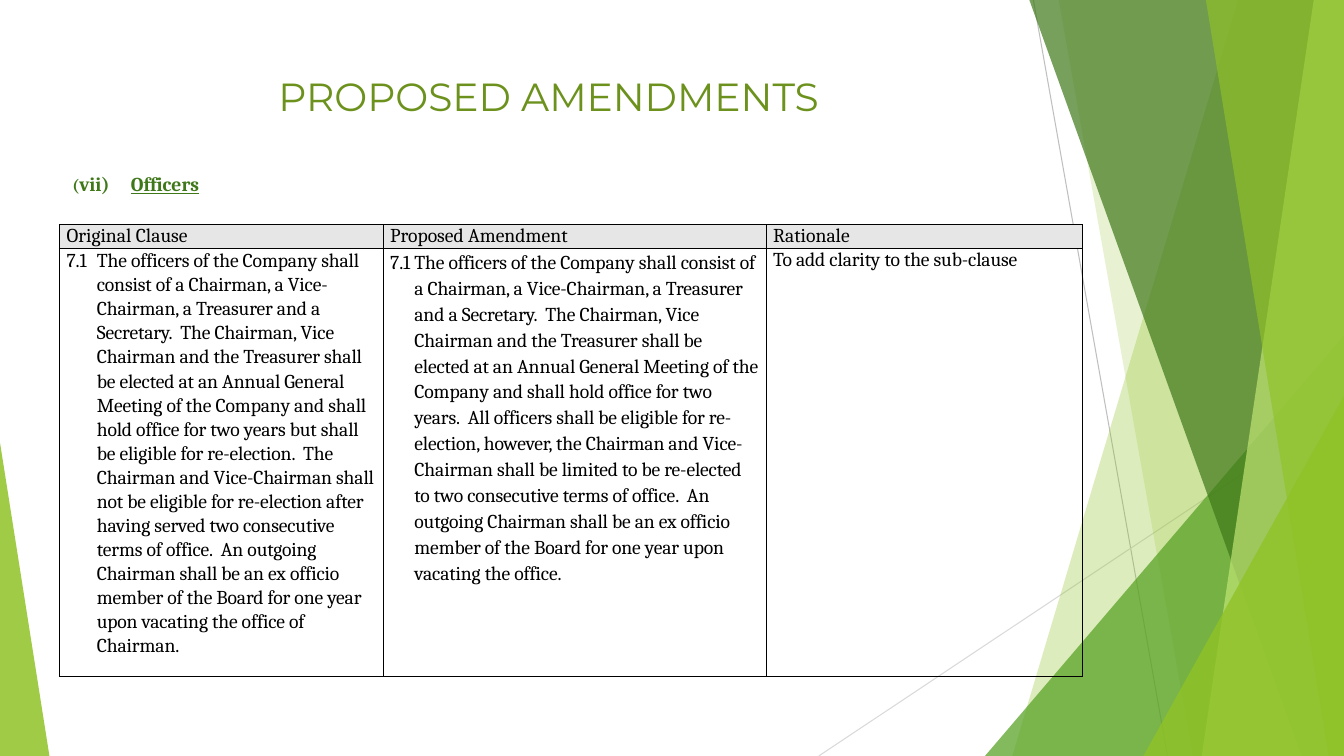
"""Build the slide on the proposed amendment to the officers clause."""
import dataclasses
import typing

import lxml.etree
import pptx
import pptx.dml.color
import pptx.enum.shapes
import pptx.enum.text
import pptx.oxml
import pptx.oxml.ns
import pptx.slide
import pptx.util

RGBColor = pptx.dml.color.RGBColor
LIME = RGBColor(0x90, 0xC2, 0x26)
PALE_LIME = RGBColor(0xC0, 0xE4, 0x74)
GREEN = RGBColor(0x54, 0xA0, 0x21)
DARK_GREEN = RGBColor(0x3F, 0x78, 0x19)
TITLE_GREEN = RGBColor(0x6C, 0x92, 0x1D)
BLACK = RGBColor(0, 0, 0)
HEADER_GREY = RGBColor(0xE7, 0xE6, 0xE6)
MID_GREY = RGBColor(0xBF, 0xBF, 0xBF)
LIGHT_GREY = RGBColor(0xD9, 0xD9, 0xD9)
SLIDE_WIDTH = pptx.util.Inches(13.33)
SLIDE_HEIGHT = pptx.util.Inches(7.5)
BODY_FONT = "Cambria"


@dataclasses.dataclass(frozen=True)
class Ray:
    start: tuple[float, float]
    end: tuple[float, float]
    color: RGBColor


@dataclasses.dataclass(frozen=True)
class Wedge:
    top: float
    bottom: float
    color: RGBColor
    opacity: int


@dataclasses.dataclass(frozen=True)
class Corner:
    left: float
    right: float
    top: float
    apex: float
    color: RGBColor
    opacity: int


@dataclasses.dataclass(frozen=True)
class Clause:
    heading: str
    text: str
    width: float
    margin: float = 0
    indent: float = 0
    line_spacing: float = 1.0


RAYS = (
    Ray((76.89, 0), (86.87, 100), MID_GREY),
    Ray((100, 53.73), (60.92, 100), LIGHT_GREY),
)
FACETS = (
    Wedge(92.12, 75.32, LIME, 30),
    Wedge(78.77, 88.75, LIME, 20),
    Corner(73.29, 100, 44.4, 1, GREEN, 72),
    Wedge(76.59, 96.85, DARK_GREEN, 70),
    Wedge(97.75, 89.42, PALE_LIME, 70),
    Wedge(89.72, 98.87, LIME, 65),
    Corner(85.07, 100, 52.4, 1, LIME, 80),
    Corner(0, 3.68, 58.53, 0, LIME, 85),
)
SHARED_OPENING = (
    "7.1\tThe officers of the Company shall consist of a Chairman, a Vice-Chairman, a Treasurer "
    "and a Secretary.  The Chairman, Vice Chairman and the Treasurer shall be elected at an Annual "
    "General Meeting of the Company and shall hold office for two years"
)
SHARED_ENDING = (
    "terms of office.  An outgoing Chairman shall be an ex officio member of the Board "
    "for one year upon vacating the office"
)
CLAUSES = (
    Clause(
        "Original Clause",
        f"{SHARED_OPENING} but shall be eligible for re-election.  The Chairman and Vice-Chairman "
        f"shall not be eligible for re-election after having served two consecutive {SHARED_ENDING} of Chairman.",
        24.08, 0.3, -0.3, 1.07,
    ),
    Clause(
        "Proposed Amendment",
        f"{SHARED_OPENING}.  All officers shall be eligible for re-election, however, the Chairman and "
        f"Vice-Chairman shall be limited to be re-elected to two consecutive {SHARED_ENDING}.",
        28.5, 0.24, -0.24, 1.15,
    ),
    Clause("Rationale", "To add clarity to the sub-clause", 23.55),
)


def across(percent: float) -> int:
    return round(SLIDE_WIDTH * percent / 100)


def down(percent: float) -> int:
    return round(SLIDE_HEIGHT * percent / 100)


def add_child(parent: typing.Any, tag: str, **attributes: str) -> typing.Any:
    return lxml.etree.SubElement(parent, pptx.oxml.ns.qn(tag), attributes)


def draw_ray(slide: pptx.slide.Slide, ray: Ray) -> None:
    (x1, y1), (x2, y2) = ray.start, ray.end
    connector = slide.shapes.add_connector(
        pptx.enum.shapes.MSO_CONNECTOR.STRAIGHT, across(x1), down(y1), across(x2), down(y2))
    connector.line.color.rgb = ray.color
    connector.line.width = pptx.util.Pt(0.75)
    add_child(connector._element.spPr, "a:effectLst")


def draw_facet(slide: pptx.slide.Slide, facet: Wedge | Corner) -> None:
    if isinstance(facet, Wedge):
        builder = slide.shapes.build_freeform(across(facet.top), 0)
        builder.add_line_segments(
            [(across(100), 0), (across(100), down(100)), (across(facet.bottom), down(100))])
        shape = builder.convert_to_shape()
    else:
        shape = slide.shapes.add_shape(
            pptx.enum.shapes.MSO_SHAPE.ISOSCELES_TRIANGLE, across(facet.left), down(facet.top),
            across(facet.right - facet.left), down(100 - facet.top))
        shape.adjustments[0] = facet.apex
    shape.shadow.inherit = False
    shape.line.fill.background()
    shape.fill.solid()
    shape.fill.fore_color.rgb = facet.color
    color = shape._element.spPr.find(".//" + pptx.oxml.ns.qn("a:srgbClr"))
    add_child(color, "a:alpha", val=str(facet.opacity * 1000))


def format_font(font: typing.Any, name: str, size: float, color: RGBColor) -> None:
    font.name = name
    font.size = pptx.util.Pt(size)
    font.color.rgb = color


def draw_title(slide: pptx.slide.Slide) -> None:
    title = slide.shapes.title
    title.left, title.top = across(5.55), down(8.93)
    title.width, title.height = across(70.52), down(8.93)
    title.text_frame.text = "PROPOSED AMENDMENTS"
    title.text_frame.auto_size = pptx.enum.text.MSO_AUTO_SIZE.NONE
    title.text_frame.vertical_anchor = pptx.enum.text.MSO_ANCHOR.TOP
    paragraph = title.text_frame.paragraphs[0]
    paragraph.alignment = pptx.enum.text.PP_ALIGN.CENTER
    format_font(paragraph.runs[0].font, "Montserrat", 28, TITLE_GREEN)


def draw_heading(slide: pptx.slide.Slide) -> None:
    heading = slide.shapes.add_textbox(across(4.65), down(22), across(41.41), down(4.53))
    heading.text_frame.word_wrap = True
    heading.text_frame.vertical_anchor = pptx.enum.text.MSO_ANCHOR.MIDDLE
    paragraph = heading.text_frame.paragraphs[0]
    for text, size, underline in (("(", 12, False), ("vii)\t", 14, False), ("Officers", 14, True)):
        run = paragraph.add_run()
        run.text = text
        format_font(run.font, BODY_FONT, size, DARK_GREEN)
        run.font.bold = True
        run.font.underline = underline
    tabs = add_child(paragraph._p.get_or_add_pPr(), "a:tabLst")
    add_child(tabs, "a:tab", pos=str(pptx.util.Inches(0.58)), algn="l")


def fill_cell(cell: typing.Any, text: str) -> typing.Any:
    cell.text_frame.text = text
    cell.margin_left = cell.margin_right = pptx.util.Inches(0.07)
    cell.margin_top = cell.margin_bottom = 0
    properties = cell._tc.get_or_add_tcPr()
    for side in ("a:lnL", "a:lnR", "a:lnT", "a:lnB"):
        border = add_child(properties, side, w=str(pptx.util.Pt(1)))
        add_child(add_child(border, "a:solidFill"), "a:srgbClr", val=str(BLACK))
    cell.fill.background()
    paragraph = cell.text_frame.paragraphs[0]
    format_font(paragraph.runs[0].font, BODY_FONT, 14, BLACK)
    return paragraph


def draw_table(slide: pptx.slide.Slide) -> None:
    table = slide.shapes.add_table(
        2, len(CLAUSES), across(4.43), down(29.73),
        across(sum(clause.width for clause in CLAUSES)), down(59.73)).table
    table.first_row = table.horz_banding = False
    table.rows[0].height, table.rows[1].height = down(3.07), down(56.66)
    for column, clause in enumerate(CLAUSES):
        table.columns[column].width = across(clause.width)
        header = table.cell(0, column)
        fill_cell(header, clause.heading)
        header.fill.solid()
        header.fill.fore_color.rgb = HEADER_GREY
        paragraph = fill_cell(table.cell(1, column), clause.text)
        paragraph.line_spacing = clause.line_spacing
        properties = paragraph._p.get_or_add_pPr()
        properties.set("marL", str(pptx.util.Inches(clause.margin)))
        properties.set("indent", str(pptx.util.Inches(clause.indent)))
        paragraph.runs[0].font._element.set("spc", "-10")


def main() -> None:
    presentation = pptx.Presentation()
    presentation.slide_width, presentation.slide_height = SLIDE_WIDTH, SLIDE_HEIGHT
    slide = presentation.slides.add_slide(presentation.slide_layouts[5])
    for ray in RAYS:
        draw_ray(slide, ray)
    for facet in FACETS:
        draw_facet(slide, facet)
    draw_title(slide)
    draw_heading(slide)
    draw_table(slide)
    presentation.save("out.pptx")


if __name__ == "__main__":
    main()
